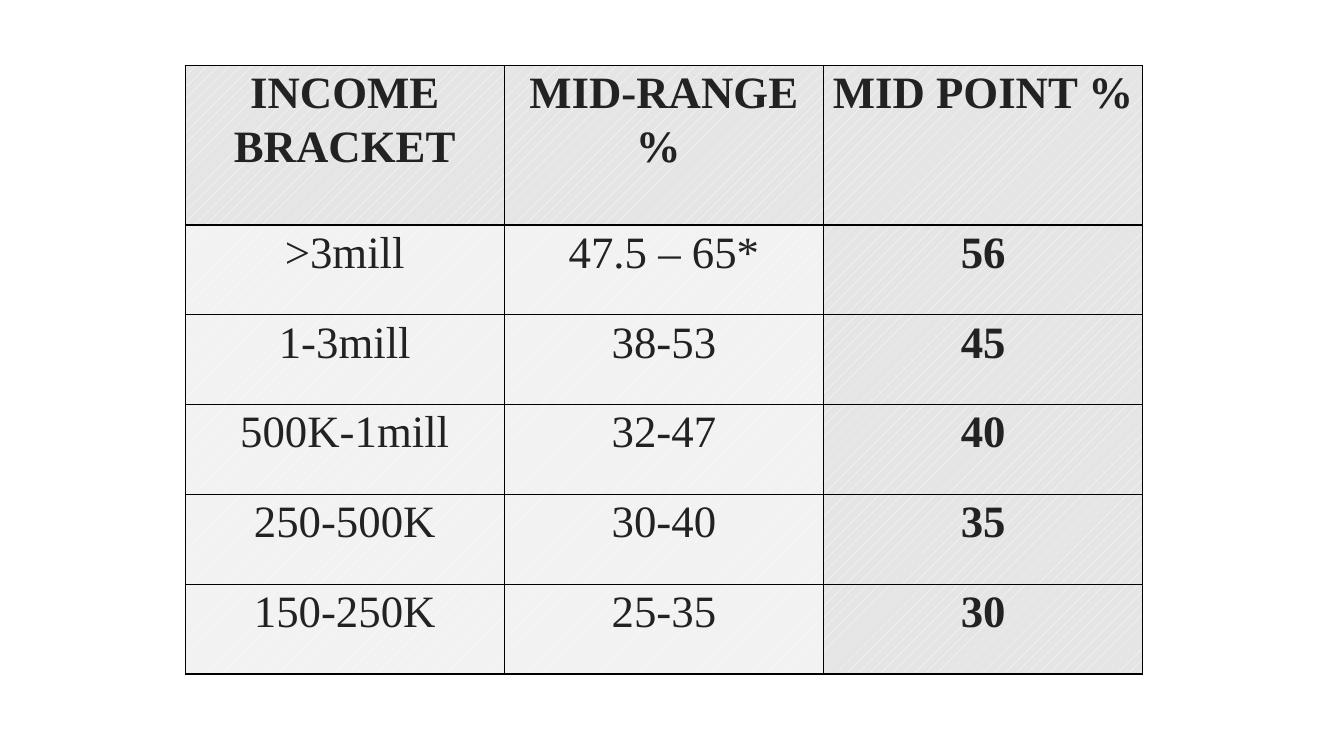
from lxml import etree
from pptx import Presentation
from pptx.dml.color import RGBColor
from pptx.enum import dml, text
from pptx.oxml.ns import qn
from pptx.util import Pt

WHITE = RGBColor(0xFF, 0xFF, 0xFF)
INK = RGBColor(0x22, 0x22, 0x22)
LINE = RGBColor(0, 0, 0)
STRONG = (dml.MSO_PATTERN.PERCENT_10, RGBColor(0xE5, 0xE5, 0xE5))
LIGHT = (dml.MSO_PATTERN.PERCENT_5, RGBColor(0xF2, 0xF2, 0xF2))

HEADER_HEIGHT, ROW_HEIGHT = 113.8, 64.2
BRACKETS = [
    ("INCOME BRACKET", "MID-RANGE % ", "MID POINT %"),
    (">3mill", "47.5 – 65*", "56"),
    ("1-3mill", "38-53", "45"),
    ("500K-1mill", "32-47", "40"),
    ("250-500K", "30-40", "35"),
    ("150-250K", "25-35", "30"),
]


def write(tf, words, size=32, bold=False, space=2):
    p = tf.paragraphs[0]
    p.alignment = text.PP_ALIGN.CENTER
    p.line_spacing = 1.07
    p.space_before = p.space_after = Pt(space)
    r = p.add_run()
    r.text = words
    r.font.name = "Times New Roman"
    r.font.size = Pt(size)
    r.font.bold = bold
    r.font.color.rgb = INK


def hatch(cell, pattern, back):
    cell.fill.patterned()
    cell.fill.pattern = pattern
    cell.fill.fore_color.rgb = WHITE
    cell.fill.back_color.rgb = back


def border(cell, **widths):
    # Border lines must precede the fill in the cell properties
    tcPr = cell._tc.get_or_add_tcPr()
    for i, (side, width) in enumerate(widths.items()):
        ln = etree.Element(qn("a:ln" + side), w=str(Pt(width)))
        fill = etree.SubElement(ln, qn("a:solidFill"))
        etree.SubElement(fill, qn("a:srgbClr"), val=str(LINE))
        tcPr.insert(i, ln)


def income_table(slide, left, top, width):
    rows, cols = len(BRACKETS), len(BRACKETS[0])
    height = HEADER_HEIGHT + ROW_HEIGHT * (rows - 1)
    table = slide.shapes.add_table(
        rows, cols, Pt(left), Pt(top), Pt(width), Pt(height)).table
    for column in table.columns:
        column.width = Pt(width / cols)

    for i, values in enumerate(BRACKETS):
        header = i == 0
        table.rows[i].height = Pt(HEADER_HEIGHT if header else ROW_HEIGHT)
        for j, value in enumerate(values):
            cell = table.cell(i, j)
            strong = header or j == cols - 1
            cell.margin_left = cell.margin_right = Pt(5)
            cell.margin_top = cell.margin_bottom = 0
            write(cell.text_frame, value, bold=strong, space=3 if header else 2)
            hatch(cell, *(STRONG if strong else LIGHT))
            # Heavier rule between the header and the brackets
            border(cell, L=1, R=1, T=1.5 if i == 1 else 1, B=1.5 if header else 1)


def main():
    prs = Presentation()
    prs.slide_width, prs.slide_height = Pt(960), Pt(540)
    slide = prs.slides.add_slide(prs.slide_layouts[6])
    income_table(slide, left=132.3, top=46.8, width=684)
    prs.save("out.pptx")


if __name__ == "__main__":
    main()
